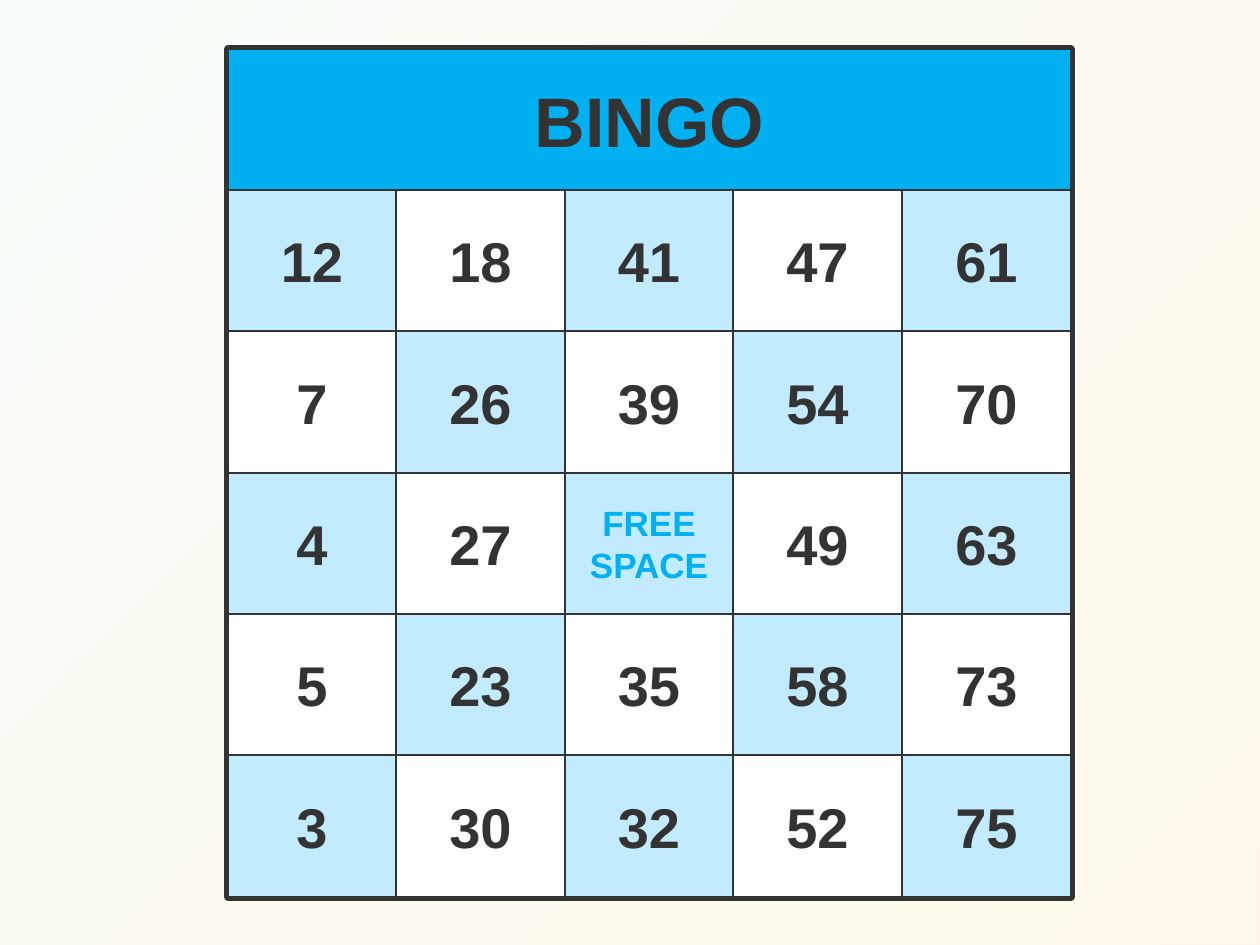
from dataclasses import dataclass

from lxml.etree import SubElement
from pptx import Presentation
from pptx.dml.color import RGBColor
from pptx.enum.shapes import MSO_SHAPE as Shape
from pptx.enum.text import MSO_ANCHOR as Anchor, PP_ALIGN as Align
from pptx.oxml.ns import qn
from pptx.util import Pt

EMU_PER_PX = 914400 / 126
SLIDE_WIDTH, SLIDE_HEIGHT = 1260, 945
CARD_LEFT, CARD_TOP, CARD_WIDTH, CARD_HEIGHT = 228, 49, 843, 848
COLUMNS, ROWS = 5, 6
FREE_SPACE = "FREE\nSPACE"
NUMBERS = [
    ["12", "18", "41", "47", "61"],
    ["7", "26", "39", "54", "70"],
    ["4", "27", FREE_SPACE, "49", "63"],
    ["5", "23", "35", "58", "73"],
    ["3", "30", "32", "52", "75"],
]


@dataclass(frozen=True)
class Theme:
    font: str = "Arial"
    ink: str = "333333"
    accent: str = "00B0F0"
    shaded: str = "C2EBFF"
    plain: str = "FFFFFF"
    backdrop: tuple = (("F2FDF7", 48), ("FFEFCC", 36))
    title_size: int = 40
    number_size: int = 32
    free_size: int = 20
    frame_line: float = 4.5
    cell_line: float = 0.75


THEME = Theme()


def px(length):
    return round(length * EMU_PER_PX)


def rgb(color):
    return RGBColor.from_string(color)


def add_rectangle(slide, left, top, width, height):
    shape = slide.shapes.add_shape(
        Shape.RECTANGLE, px(left), px(top), px(width), px(height)
    )
    shape.shadow.inherit = False
    return shape


def set_outline(shape, width):
    shape.line.color.rgb = rgb(THEME.ink)
    shape.line.width = Pt(width)


def add_backdrop(slide):
    shape = add_rectangle(slide, 0, 0, SLIDE_WIDTH, SLIDE_HEIGHT)
    shape.line.fill.background()
    shape.fill.gradient()
    shape.fill.gradient_angle = 315
    for stop, (color, _) in zip(shape.fill.gradient_stops, THEME.backdrop):
        stop.color.rgb = rgb(color)
    colors = shape.element.spPr.iter(qn("a:srgbClr"))
    for element, (_, opacity) in zip(colors, THEME.backdrop):
        SubElement(element, qn("a:alpha"), val=str(opacity * 1000))


def add_frame(slide):
    shape = add_rectangle(slide, CARD_LEFT, CARD_TOP, CARD_WIDTH, CARD_HEIGHT)
    shape.fill.background()
    set_outline(shape, THEME.frame_line)


def add_cell(slide, row, column, span, text, fill, size, color):
    left, right = (CARD_WIDTH * edge // COLUMNS for edge in (column, column + span))
    top, bottom = (CARD_HEIGHT * edge // ROWS for edge in (row, row + 1))
    shape = add_rectangle(
        slide, CARD_LEFT + left, CARD_TOP + top, right - left, bottom - top
    )
    shape.fill.solid()
    shape.fill.fore_color.rgb = rgb(fill)
    set_outline(shape, THEME.cell_line)
    frame = shape.text_frame
    frame.word_wrap = False
    frame.vertical_anchor = Anchor.MIDDLE
    frame.margin_left = frame.margin_right = px(10)
    frame.margin_top = frame.margin_bottom = px(6)
    frame.text = text
    for paragraph in frame.paragraphs:
        paragraph.alignment = Align.CENTER
        paragraph.font.name = THEME.font
        paragraph.font.size = Pt(size)
        paragraph.font.bold = True
        paragraph.font.color.rgb = rgb(color)


def add_numbers(slide):
    for row, numbers in enumerate(NUMBERS):
        for column, text in enumerate(numbers):
            fill = THEME.plain if (row + column) % 2 else THEME.shaded
            if text == FREE_SPACE:
                size, color = THEME.free_size, THEME.accent
            else:
                size, color = THEME.number_size, THEME.ink
            add_cell(slide, row + 1, column, 1, text, fill, size, color)


def main():
    presentation = Presentation()
    presentation.slide_width = px(SLIDE_WIDTH)
    presentation.slide_height = px(SLIDE_HEIGHT)
    slide = presentation.slides.add_slide(presentation.slide_layouts[6])
    add_backdrop(slide)
    add_frame(slide)
    add_numbers(slide)
    add_cell(
        slide, 0, 0, COLUMNS, "BINGO", THEME.accent, THEME.title_size, THEME.ink
    )
    presentation.save("out.pptx")


if __name__ == "__main__":
    main()
